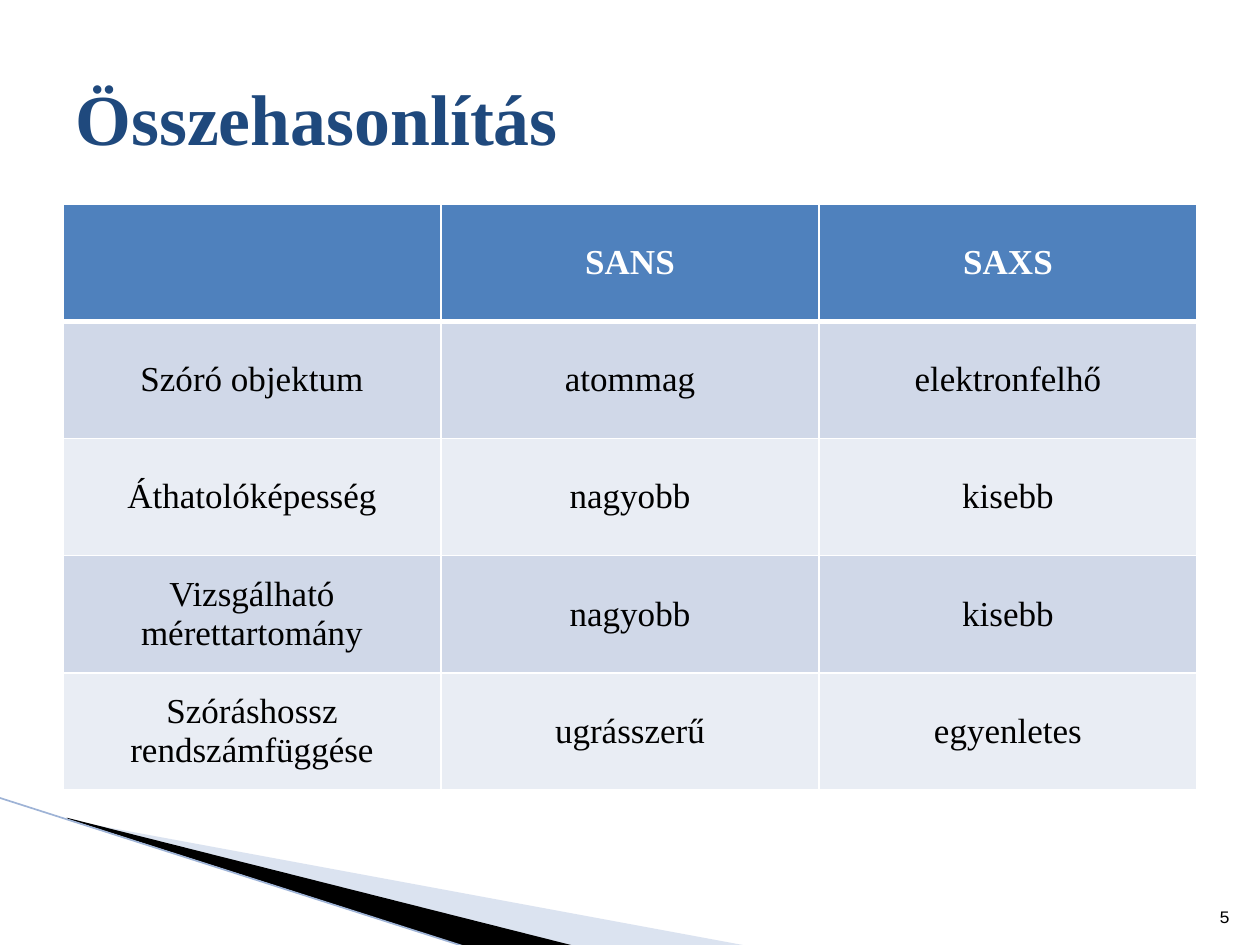
from dataclasses import dataclass

from lxml.etree import SubElement
from pptx import Presentation
from pptx.dml.color import RGBColor as Color
from pptx.enum.shapes import MSO_CONNECTOR as Connector
from pptx.enum.text import MSO_ANCHOR as Anchor, PP_ALIGN as Align
from pptx.oxml.ns import qn
from pptx.util import Inches, Pt

# Content
TITLE = "Összehasonlítás"
PAGE_NUMBER = "5"
ROWS = [
    ("", "SANS", "SAXS"),
    ("Szóró objektum", "atommag", "elektronfelhő"),
    ("Áthatolóképesség", "nagyobb", "kisebb"),
    ("Vizsgálható mérettartomány", "nagyobb", "kisebb"),
    ("Szóráshossz rendszámfüggése", "ugrásszerű", "egyenletes"),
]
PALE_WEDGE = [(0.55, 6.51), (5.95, 7.51), (4.56, 7.51), (0.55, 6.5)]
DARK_WEDGE = [(0.53, 6.49), (4.57, 7.51), (3.72, 7.52), (0.54, 6.5)]
EDGE = [(-0.01, 6.33), (3.71, 7.52)]


@dataclass(frozen=True)
class Theme:
    font: str = "Times New Roman"
    number_font: str = "Courier New"
    title_size: float = 41
    table_size: float = 20
    number_size: float = 10
    title: str = "1F497D"
    text: str = "000000"
    white: str = "FFFFFF"
    header: str = "4F81BD"
    bands: tuple = ("D0D8E8", "E9EDF4")
    pale: str = "A7B9DB"
    edge: str = "9EB3D6"


THEME = Theme()


def style_text(para, font, size, color, bold=False):
    for span in para.runs:
        span.font.name = font
        span.font.size = Pt(size)
        span.font.bold = bold
        span.font.color.rgb = Color.from_string(color)


def add_wedge(page, points, color, opacity=100):
    corners = [(Inches(x), Inches(y)) for x, y in points]
    builder = page.shapes.build_freeform(*corners[0])
    builder.add_line_segments(corners[1:], close=True)
    wedge = builder.convert_to_shape()
    wedge.shadow.inherit = False
    wedge.fill.solid()
    wedge.fill.fore_color.rgb = Color.from_string(color)
    wedge.line.fill.background()
    if opacity < 100:
        tint = wedge.fill._xPr.find(".//" + qn("a:srgbClr"))
        SubElement(tint, qn("a:alpha"), val=str(opacity * 1000))


def add_border(cell, side, points):
    line = SubElement(cell._tc.get_or_add_tcPr(), qn(f"a:ln{side}"), w=str(Pt(points)))
    fill = SubElement(line, qn("a:solidFill"))
    SubElement(fill, qn("a:srgbClr"), val=THEME.white)


def format_cell(cell, row):
    is_header = row == 0
    widths = {"L": 1, "R": 1, "T": 3 if row == 1 else 1, "B": 3 if is_header else 1}
    for side, points in widths.items():
        add_border(cell, side, points)
    cell.fill.solid()
    fill = THEME.header if is_header else THEME.bands[(row - 1) % 2]
    cell.fill.fore_color.rgb = Color.from_string(fill)
    cell.vertical_anchor = Anchor.MIDDLE
    para = cell.text_frame.paragraphs[0]
    para.alignment = Align.CENTER
    color = THEME.white if is_header else THEME.text
    style_text(para, THEME.font, THEME.table_size, color, is_header)


def main():
    deck = Presentation()
    deck.slide_width, deck.slide_height = Inches(10), Inches(7.5)
    page = deck.slides.add_slide(deck.slide_layouts[5])

    # Corner decoration
    add_wedge(page, PALE_WEDGE, THEME.pale, opacity=40)
    add_wedge(page, DARK_WEDGE, THEME.text)
    ends = [Inches(value) for point in EDGE for value in point]
    edge = page.shapes.add_connector(Connector.STRAIGHT, *ends)
    edge.line.color.rgb = Color.from_string(THEME.edge)
    edge.line.width = Pt(0.95)
    SubElement(edge._element.spPr, qn("a:effectLst"))

    # Comparison table
    frame = page.shapes.add_table(
        len(ROWS), len(ROWS[0]), Inches(0.5), Inches(1.62), Inches(9), Inches(4.65)
    )
    for row, values in enumerate(ROWS):
        for column, value in enumerate(values):
            cell = frame.table.cell(row, column)
            cell.text_frame.text = value
            format_cell(cell, row)

    # Title
    title = page.shapes.title
    title.left, title.top = Inches(0.5), Inches(0.3)
    title.width, title.height = Inches(9), Inches(1.25)
    title.text_frame.text = TITLE
    title.text_frame.vertical_anchor = Anchor.MIDDLE
    para = title.text_frame.paragraphs[0]
    para.alignment = Align.LEFT
    style_text(para, THEME.font, THEME.title_size, THEME.title, bold=True)

    # Page number
    box = page.shapes.add_textbox(Inches(9.46), Inches(7.01), Inches(0.4), Inches(0.4))
    box.text_frame.word_wrap = True
    box.text_frame.vertical_anchor = Anchor.BOTTOM
    box.text_frame.text = PAGE_NUMBER
    para = box.text_frame.paragraphs[0]
    para.alignment = Align.RIGHT
    style_text(para, THEME.number_font, THEME.number_size, THEME.text)

    deck.save("out.pptx")


if __name__ == "__main__":
    main()
